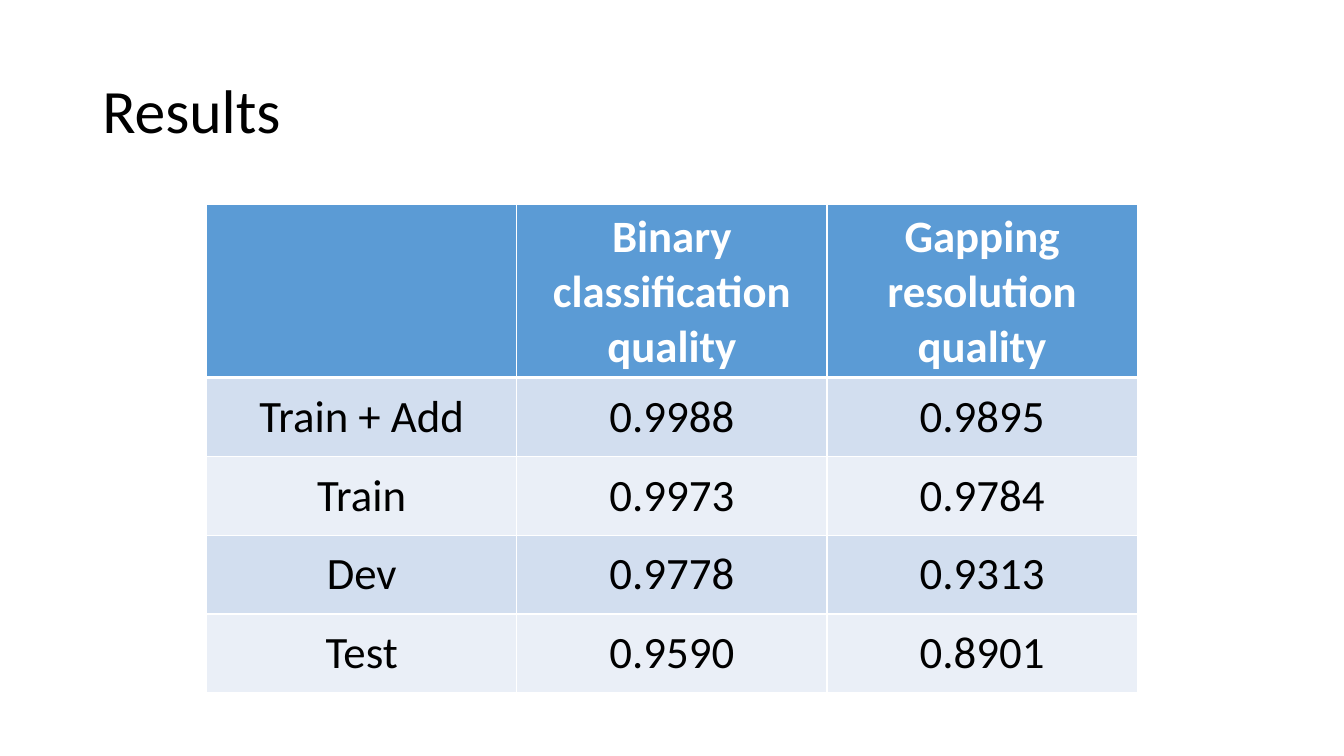
from lxml import etree
from pptx import Presentation
from pptx.dml.color import RGBColor
from pptx.enum import text
from pptx.oxml import ns
from pptx.util import Pt

TITLE = "Results"
HEADER = ("", "Binary classification quality", "Gapping resolution quality")
SCORES = [
    ("Train + Add", "0.9988", "0.9895"),
    ("Train", "0.9973", "0.9784"),
    ("Dev", "0.9778", "0.9313"),
    ("Test", "0.9590", "0.8901"),
]
FONT = "Calibri"
WHITE, BLACK, HEADER_FILL = "FFFFFF", "000000", "5B9BD5"
BANDS = ("D2DEEF", "EAEFF7")
LEFT, TOP, COLUMN_WIDTH = 147.6, 146.3, 221.6
HEADER_HEIGHT, ROW_HEIGHT = 123.4, 56.3


def color(hex_code):
    return RGBColor.from_string(hex_code)


def set_font(paragraph, size, hex_code, bold=False):
    font = paragraph.font
    font.name, font.size, font.bold = FONT, Pt(size), bold
    font.color.rgb = color(hex_code)


def set_borders(cell, widths):
    """Draw white borders; widths maps the sides L, R, T, B to points."""
    properties = cell._tc.get_or_add_tcPr()
    for index, (side, width) in enumerate(widths.items()):
        line = etree.Element(ns.qn(f"a:ln{side}"), w=str(Pt(width)))
        fill = etree.SubElement(line, ns.qn("a:solidFill"))
        etree.SubElement(fill, ns.qn("a:srgbClr"), val=WHITE)
        properties.insert(index, line)


def add_title(slide):
    frame = slide.shapes.add_textbox(Pt(66), Pt(28.8), Pt(828), Pt(104.4)).text_frame
    frame.word_wrap = True
    frame.vertical_anchor = text.MSO_ANCHOR.MIDDLE
    heading = frame.paragraphs[0]
    heading.text = TITLE
    heading.line_spacing = 0.9
    set_font(heading, 44, BLACK)


def add_results(slide):
    rows = [HEADER, *SCORES]
    heights = [HEADER_HEIGHT] + [ROW_HEIGHT] * len(SCORES)
    results = slide.shapes.add_table(
        len(rows), len(HEADER), Pt(LEFT), Pt(TOP),
        Pt(COLUMN_WIDTH * len(HEADER)), Pt(sum(heights))).table
    for column in results.columns:
        column.width = Pt(COLUMN_WIDTH)
    for r, (row, height) in enumerate(zip(rows, heights)):
        results.rows[r].height = Pt(height)
        is_header = r == 0
        for c, wording in enumerate(row):
            cell = results.cell(r, c)
            cell.text = wording
            cell.vertical_anchor = text.MSO_ANCHOR.MIDDLE
            cell.fill.solid()
            cell.fill.fore_color.rgb = color(HEADER_FILL if is_header else BANDS[(r - 1) % 2])
            set_borders(cell, {"L": 1, "R": 1, "T": 3 if r == 1 else 1, "B": 3 if is_header else 1})
            paragraph = cell.text_frame.paragraphs[0]
            paragraph.alignment = text.PP_ALIGN.CENTER
            set_font(paragraph, 32, WHITE if is_header else BLACK, is_header)


def main():
    deck = Presentation()
    deck.slide_width, deck.slide_height = Pt(960), Pt(540)
    slide = deck.slides.add_slide(deck.slide_layouts[6])
    add_title(slide)
    add_results(slide)
    deck.save("out.pptx")


if __name__ == "__main__":
    main()
